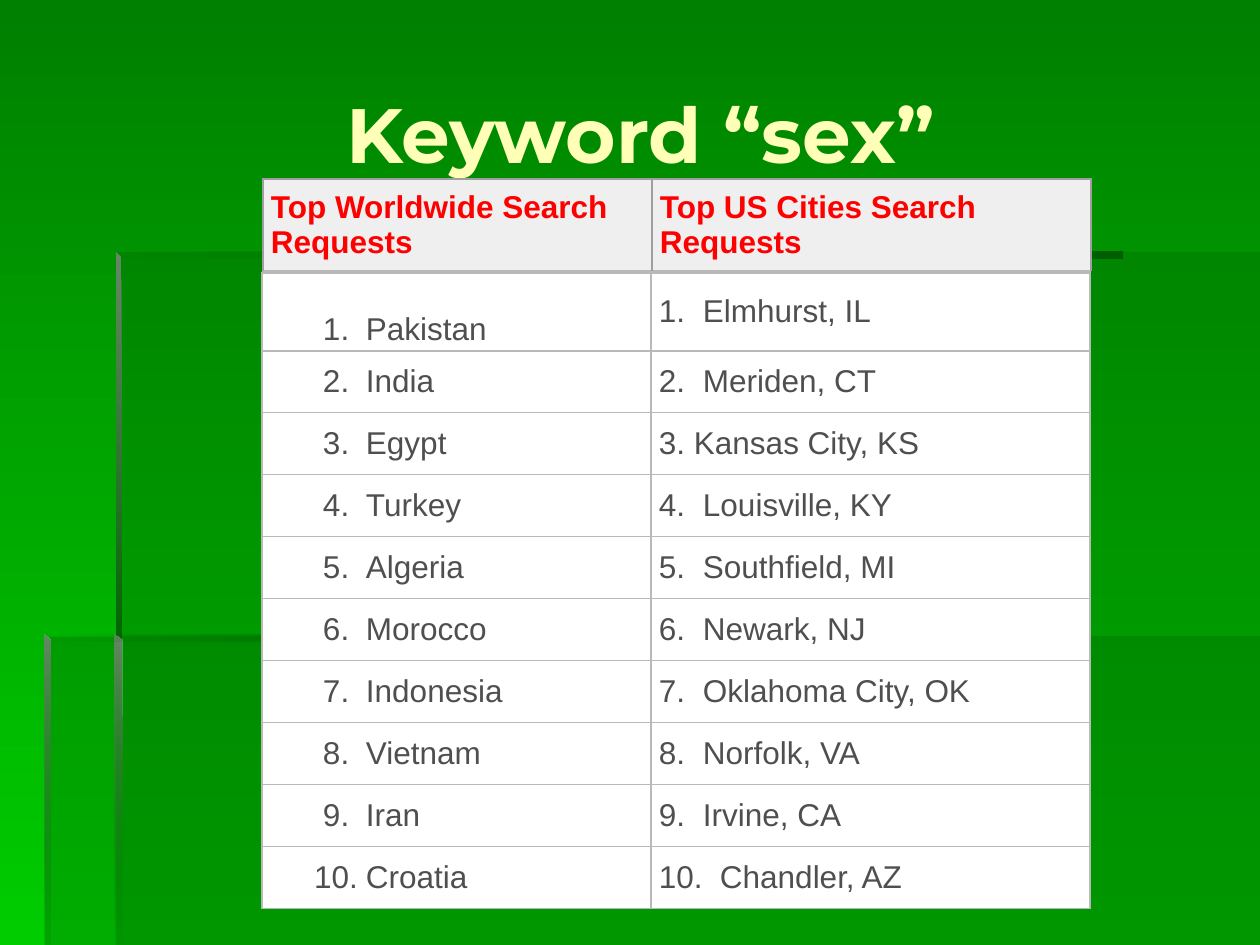
from lxml import etree
from pptx import Presentation
from pptx import util as u
from pptx.dml.color import RGBColor
from pptx.enum import text
from pptx.oxml import ns

EMU_PER_PX = 914400 / 126
DARK = RGBColor(0x00, 0x66, 0x00)
DARKER = RGBColor(0x00, 0x5E, 0x00)
MIST = RGBColor(0x66, 0x86, 0x66)
TOP_GREEN = RGBColor(0x00, 0x80, 0x00)
BOTTOM_GREEN = RGBColor(0x00, 0xCC, 0x00)
CREAM = RGBColor(0xFF, 0xFF, 0xB7)
RED = RGBColor(0xFF, 0x00, 0x00)
GREY_TEXT = RGBColor(0x4F, 0x4F, 0x4F)
HEADER_FILL = RGBColor(0xEF, 0xEF, 0xEF)
WHITE = RGBColor(0xFF, 0xFF, 0xFF)
HEADER_LINE = RGBColor(0x9F, 0x9F, 0x9F)
BODY_LINE = RGBColor(0xB9, 0xB9, 0xB9)

# Content
TITLE = "Keyword “sex”"
HEADINGS = ["Top Worldwide Search Requests", "Top US Cities Search Requests"]
COUNTRIES = ["Pakistan", "India", "Egypt", "Turkey", "Algeria",
             "Morocco", "Indonesia", "Vietnam", "Iran", "Croatia"]
CITIES = ["Elmhurst, IL", "Meriden, CT", "Kansas City, KS", "Louisville, KY",
          "Southfield, MI", "Newark, NJ", "Oklahoma City, OK", "Norfolk, VA",
          "Irvine, CA", "Chandler, AZ"]

# Layout in px; a hang is the room the number takes before the name
COLUMN_WIDTHS = [389, 439]
ROW_HEIGHTS = [78] + [62] * 9
COUNTRY_NAME_LEFT = 96
COUNTRY_HANGS = [43] * 9 + [52]
CITY_HANGS = [44, 44, 35] + [44] * 6 + [61]

# Backdrop: outline, then (colour, opacity) stops and angle
PANELS = [
    [(116, 636), (116, 945), (1260, 945), (1260, 636)],
    [(118, 637), (45, 637), (45, 945), (1260, 945), (1260, 252), (118, 252)],
]
EDGES = [
    ([(116, 252), (116, 258), (1123, 258), (1123, 252)],
     [(DARK, 0), (DARKER, 100)], 0),
    ([(116, 252), (116, 642), (122, 642), (121, 257)],
     [(MIST, 100), (DARK, 100)], 270),
    ([(115, 945), (122, 945), (121, 640), (115, 635)],
     [(MIST, 100), (DARK, 0)], 270),
    ([(44, 635), (44, 641), (674, 641), (674, 635)],
     [(DARK, 0), (DARKER, 100)], 0),
    ([(44, 635), (44, 945), (50, 945), (50, 641)],
     [(MIST, 100), (DARK, 10)], 270),
]


def px(value):
    return u.Emu(round(value * EMU_PER_PX))


def set_all(target, values):
    for name, value in values.items():
        setattr(target, name, value)


def set_opacity(color_parent, opacity):
    if opacity < 100:
        color = color_parent.find(".//" + ns.qn("a:srgbClr"))
        etree.SubElement(color, ns.qn("a:alpha"), val=str(opacity * 1000))


def set_gradient(fill, colors, angle):
    fill.gradient()
    fill.gradient_angle = angle
    for stop, color in zip(fill.gradient_stops, colors):
        stop.color.rgb = color


def add_outline(slide, points):
    builder = slide.shapes.build_freeform(*points[0], scale=EMU_PER_PX)
    builder.add_line_segments(points[1:], close=True)
    shape = builder.convert_to_shape()
    shape.shadow.inherit = False
    shape.line.fill.background()
    return shape


def write(paragraph, content, size, font_name, color, bold):
    run = paragraph.add_run()
    run.text = content
    set_all(run.font, {"size": u.Pt(size), "name": font_name, "bold": bold})
    run.font.color.rgb = color


def add_grid(slide, left, top, row_heights):
    frame = slide.shapes.add_table(len(row_heights), len(COLUMN_WIDTHS),
                                   px(left), px(top), px(sum(COLUMN_WIDTHS)),
                                   px(sum(row_heights)))
    table = frame.table
    set_all(table, {"first_row": False, "horz_banding": False})
    for column, width in zip(table.columns, COLUMN_WIDTHS):
        column.width = px(width)
    for row, height in zip(table.rows, row_heights):
        row.height = px(height)
    return table


def format_cell(cell, fill_color, side_color, bottom_color):
    set_all(cell, {"margin_left": px(8), "margin_right": px(4),
                   "margin_top": px(4), "margin_bottom": px(4),
                   "vertical_anchor": text.MSO_ANCHOR.MIDDLE})
    properties = cell._tc.get_or_add_tcPr()
    borders = {"lnL": side_color, "lnR": side_color,
               "lnT": side_color, "lnB": bottom_color}
    for side, color in borders.items():
        line = etree.SubElement(properties, ns.qn("a:" + side), w=str(u.Pt(0.75)))
        solid = etree.SubElement(line, ns.qn("a:solidFill"))
        etree.SubElement(solid, ns.qn("a:srgbClr"), val=str(color))
    cell.fill.solid()
    cell.fill.fore_color.rgb = fill_color


def main():
    presentation = Presentation()
    set_all(presentation, {"slide_width": px(1260), "slide_height": px(945)})
    slide = presentation.slides.add_slide(presentation.slide_layouts[6])

    # Background, translucent panels and bevelled edges
    set_gradient(slide.background.fill, [TOP_GREEN, BOTTOM_GREEN], 270)
    for points in PANELS:
        panel = add_outline(slide, points)
        panel.fill.solid()
        panel.fill.fore_color.rgb = DARK
        set_opacity(panel._element.spPr, 30)
    for points, stops, angle in EDGES:
        edge = add_outline(slide, points)
        set_gradient(edge.fill, [color for color, _ in stops], angle)
        stop_elements = edge._element.spPr.iter(ns.qn("a:gs"))
        for element, (_, opacity) in zip(stop_elements, stops):
            set_opacity(element, opacity)

    # Title
    title = slide.shapes.add_textbox(px(63), px(34), px(1155), px(198))
    set_all(title.text_frame, {"word_wrap": True,
                               "vertical_anchor": text.MSO_ANCHOR.MIDDLE})
    paragraph = title.text_frame.paragraphs[0]
    paragraph.alignment = text.PP_ALIGN.CENTER
    write(paragraph, TITLE, 44, "Montserrat", CREAM, True)

    # Ranked lists: names line up behind hanging numbers
    ranking = add_grid(slide, 262, 273, ROW_HEIGHTS)
    columns = [
        (COUNTRIES, COUNTRY_HANGS, [COUNTRY_NAME_LEFT] * len(COUNTRIES)),
        (CITIES, CITY_HANGS, CITY_HANGS),
    ]
    for column, (names, hangs, name_lefts) in enumerate(columns):
        for row, (name, hang, name_left) in enumerate(zip(names, hangs, name_lefts)):
            cell = ranking.cell(row, column)
            format_cell(cell, WHITE, BODY_LINE, BODY_LINE)
            paragraph = cell.text_frame.paragraphs[0]
            indents = paragraph._p.get_or_add_pPr()
            indents.set("marL", str(px(name_left)))
            indents.set("indent", str(px(-hang)))
            write(paragraph, f"{row + 1}.\t{name}", 18, "Arial", GREY_TEXT, False)
    ranking.cell(0, 0).vertical_anchor = text.MSO_ANCHOR.BOTTOM

    # Heading row
    header = add_grid(slide, 263, 179, [92])
    for column, heading in enumerate(HEADINGS):
        cell = header.cell(0, column)
        format_cell(cell, HEADER_FILL, HEADER_LINE, BODY_LINE)
        write(cell.text_frame.paragraphs[0], heading, 18, "Arial", RED, True)

    presentation.save("out.pptx")


if __name__ == "__main__":
    main()
